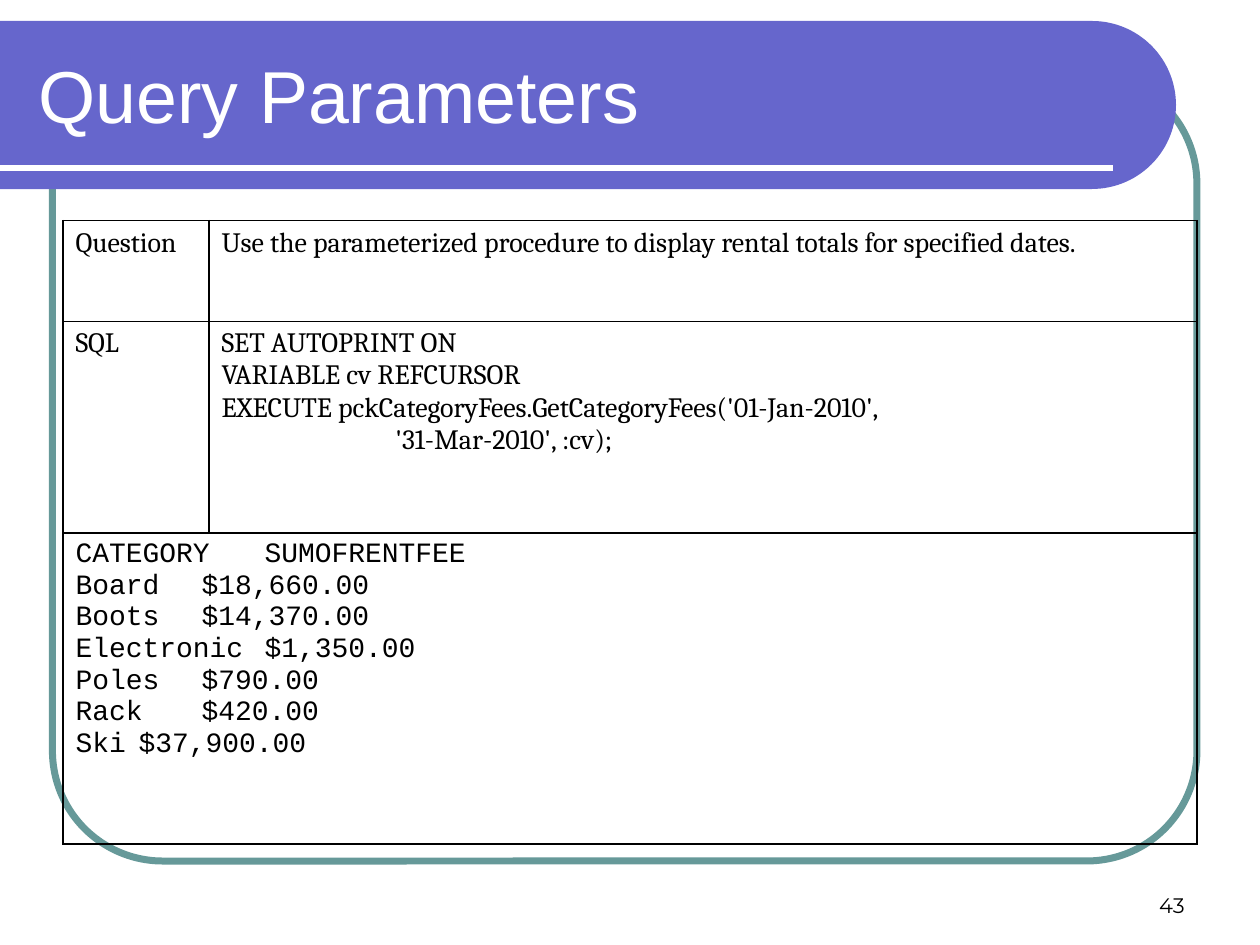
"""Build the Query Parameters slide: a banner, a rounded frame and a table of query results."""
import math
from lxml import etree
from pptx import Presentation, util as u
from pptx.dml.color import RGBColor
from pptx.enum import shapes, text
from pptx.oxml import ns

COLORS = {"paper": "FFFFFF", "ink": "000000", "banner": "6666CC", "frame": "669999"}
COLUMNS, ROWS = 24, 18
HANGING = {"left": 0.38, "first": -0.38}
CONTINUED = {"left": 1.38, "first": 0}
TABBED = {"left": 0, "first": 0, "tab": 3.72}

SQL = [
    "SET AUTOPRINT ON",
    "VARIABLE cv REFCURSOR",
    "EXECUTE pckCategoryFees.GetCategoryFees('01-Jan-2010',",
]
FEES = [
    ("CATEGORY", "SUMOFRENTFEE"),
    ("Board", "$18,660.00"),
    ("Boots", "$14,370.00"),
    ("Electronic", "$1,350.00"),
    ("Poles", "$790.00"),
    ("Rack", "$420.00"),
    ("Ski", "$37,900.00"),
]


def color(name):
    return RGBColor.from_string(COLORS[name])


class Painter:
    def __init__(self, deck):
        self.deck = deck
        self.page = deck.slides.add_slide(deck.slide_layouts[6])

    def x(self, columns):
        return round(self.deck.slide_width * columns / COLUMNS)

    def y(self, rows):
        return round(self.deck.slide_height * rows / ROWS)

    def area(self, left, top, width, height):
        return self.x(left), self.y(top), self.x(width), self.y(height)

    def span(self, para, words, size, font, ink="ink"):
        span = para.add_run()
        span.text = words
        span.font.size = u.Pt(size)
        span.font.name = font
        span.font.color.rgb = color(ink)

    def frame(self, area, radius, ink, weight):
        box = self.page.shapes.add_shape(
            shapes.MSO_SHAPE.ROUNDED_RECTANGLE, *self.area(*area))
        box.adjustments[0] = radius
        box.shadow.inherit = False
        box.fill.background()
        box.line.color.rgb = color(ink)
        box.line.width = u.Pt(weight)

    def banner(self, top, straight, radius, fill):
        angles = [math.radians(step * 3 - 90) for step in range(61)]
        curve = [(self.x(straight + radius * math.cos(angle)),
                  self.y(top + radius + radius * math.sin(angle))) for angle in angles]
        outline = self.page.shapes.build_freeform(0, self.y(top))
        outline.add_line_segments(curve + [(0, self.y(top + 2 * radius))], close=True)
        box = outline.convert_to_shape()
        box.shadow.inherit = False
        box.fill.solid()
        box.fill.fore_color.rgb = color(fill)
        box.line.fill.background()

    def rule(self, row, end, ink, weight):
        line = self.page.shapes.add_connector(
            shapes.MSO_CONNECTOR.STRAIGHT, 0, self.y(row), self.x(end), self.y(row))
        line.line.color.rgb = color(ink)
        line.line.width = u.Pt(weight)
        etree.SubElement(line._element.spPr, ns.qn("a:effectLst"))

    def label(self, area, words, size, font, ink, anchor, align):
        box = self.page.shapes.add_textbox(*self.area(*area))
        box.text_frame.word_wrap = True
        box.text_frame.vertical_anchor = anchor
        para = box.text_frame.paragraphs[0]
        para.alignment = align
        self.span(para, words, size, font, ink)

    def table(self, left, top, widths, heights):
        grid = self.page.shapes.add_table(
            len(heights), len(widths),
            *self.area(left, top, sum(widths), sum(heights))).table
        grid.first_row = grid.horz_banding = False
        for column, width in zip(grid.columns, widths):
            column.width = self.x(width)
        for row, height in zip(grid.rows, heights):
            row.height = self.y(height)
        for cell in grid.iter_cells():
            self.borders(cell)
            cell.fill.background()
        return grid

    def borders(self, cell):
        properties = cell._tc.get_or_add_tcPr()
        for side in ("lnL", "lnR", "lnT", "lnB"):
            edge = etree.SubElement(properties, ns.qn(f"a:{side}"), w=str(u.Pt(1)))
            fill = etree.SubElement(edge, ns.qn("a:solidFill"))
            etree.SubElement(fill, ns.qn("a:srgbClr"), val=COLORS["ink"])

    def fill_cell(self, cell, lines, font="Cambria"):
        for number, (words, indent) in enumerate(lines):
            frame = cell.text_frame
            para = frame.add_paragraph() if number else frame.paragraphs[0]
            self.indent(para, **indent)
            self.span(para, words, 16, font)

    def indent(self, para, left, first, tab=None):
        properties = para._p.get_or_add_pPr()
        properties.set("marL", str(u.Inches(left)))
        properties.set("indent", str(u.Inches(first)))
        if tab:
            stops = etree.SubElement(properties, ns.qn("a:tabLst"))
            etree.SubElement(stops, ns.qn("a:tab"), pos=str(u.Inches(tab)), algn="r")


def main():
    deck = Presentation()
    deck.slide_width, deck.slide_height = u.Inches(10), u.Inches(7.5)
    painter = Painter(deck)
    painter.frame((1, 1.4, 21.8, 15), 0.14, "frame", 4)
    painter.banner(0.4, 20.8, 1.6, "banner")
    painter.rule(3.2, 21.2, "paper", 3)
    painter.label((17.2, 16.4, 5.6, 1.2), "43", 12, "Montserrat", "ink",
                  text.MSO_ANCHOR.BOTTOM, text.PP_ALIGN.RIGHT)
    painter.label((0.5, 0.6, 21.05, 2.4), "Query Parameters", 42, "Arial", "paper",
                  text.MSO_ANCHOR.MIDDLE, text.PP_ALIGN.LEFT)

    grid = painter.table(1.2, 4.2, (2.78, 18.82), (1.92, 4.03, 5.93))
    grid.cell(2, 0).merge(grid.cell(2, 1))
    question = "Use the parameterized procedure to display rental totals for specified dates."
    painter.fill_cell(grid.cell(0, 0), [("Question", HANGING)])
    painter.fill_cell(grid.cell(0, 1), [(question, HANGING)])
    painter.fill_cell(grid.cell(1, 0), [("SQL", HANGING)])
    painter.fill_cell(grid.cell(1, 1), [(line, HANGING) for line in SQL]
                      + [("'31-Mar-2010', :cv);", CONTINUED)])
    painter.fill_cell(grid.cell(2, 0),
                      [(f"{category}\t{fee}", TABBED) for category, fee in FEES],
                      "Courier New")
    deck.save("out.pptx")


if __name__ == "__main__":
    main()
